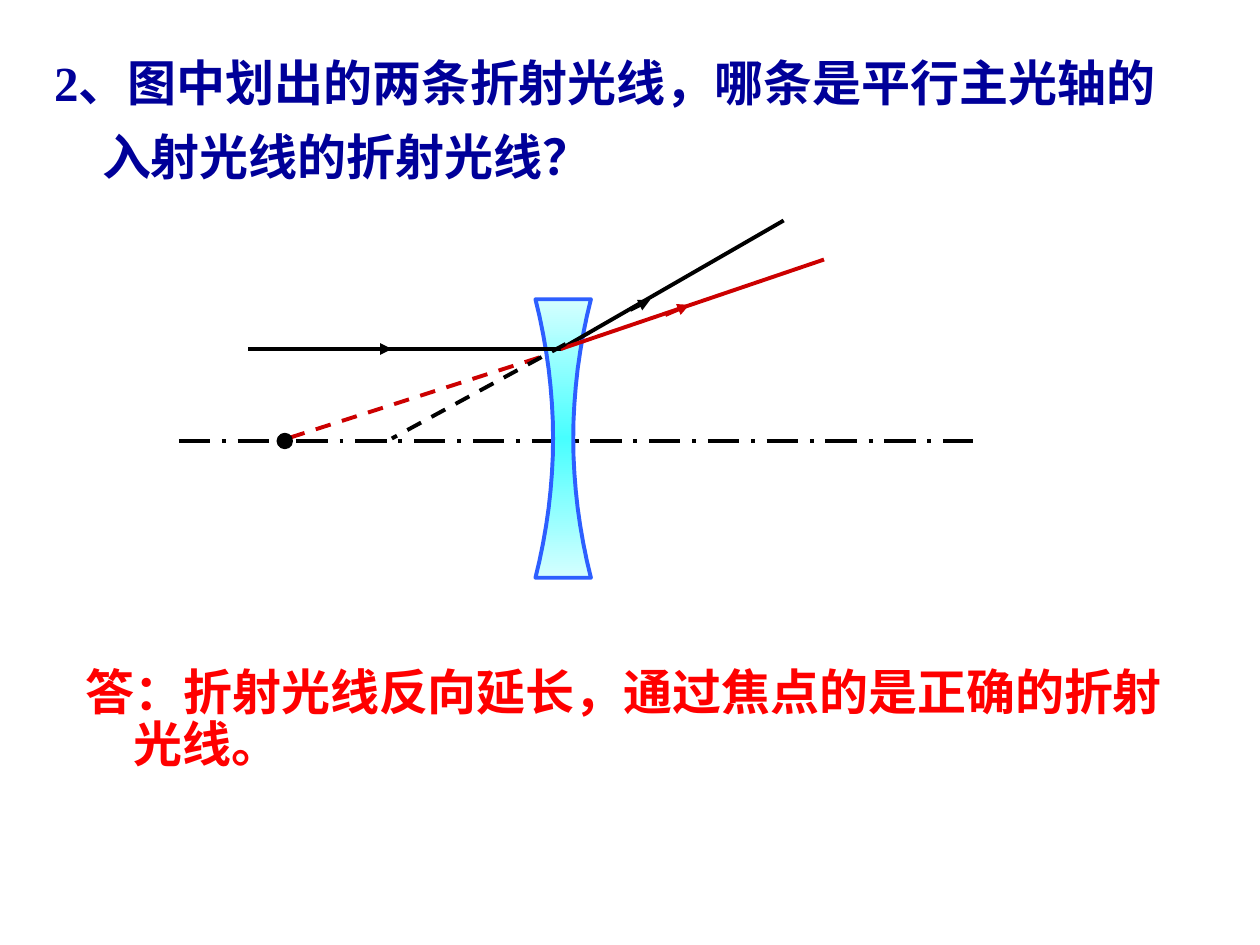
from dataclasses import dataclass
from typing import Optional

from lxml.etree import SubElement
from pptx import Presentation
from pptx.dml.color import RGBColor
from pptx.enum.dml import MSO_LINE
from pptx.enum.shapes import MSO_CONNECTOR, MSO_SHAPE
from pptx.enum.text import MSO_ANCHOR, MSO_AUTO_SIZE, PP_ALIGN
from pptx.oxml.ns import qn
from pptx.util import Emu, Inches, Pt

# Grid of 100 columns by 75 rows, each cell a tenth of an inch
CELL = Inches(0.1)
COLORS = {"question": "000099", "answer": "FF0000", "black": "000000",
          "red": "CC0000", "lens_edge": "2D5FFF",
          "lens_pale": "D5FFFF", "lens_deep": "47FFFF"}
AXIS_ROW = 35
ENTRY = (44.5, 27.7)


@dataclass
class Ray:
    start: tuple[float, float]
    end: tuple[float, float]
    color: str = "black"
    dash: Optional[MSO_LINE] = None
    arrow: bool = False


RED_EXTENSION = Ray((44.9, 27.7), (22.8, 34.8), "red", MSO_LINE.DASH)
OPTICAL_AXIS = Ray((14.2, AXIS_ROW), (77.2, AXIS_ROW),
                   dash=MSO_LINE.LONG_DASH_DOT)
LIGHT_RAYS = [
    # Incident ray
    Ray((19.7, 27.7), ENTRY),
    Ray((28.8, 27.7), (31.1, 27.7), arrow=True),
    # Two candidate refracted rays
    Ray(ENTRY, (62.2, 17.5)),
    Ray((50, 24.6), (51.6, 23.8), arrow=True),
    Ray(ENTRY, (65.4, 20.6), "red"),
    Ray((52.8, 25), (54.7, 24.2), "red", arrow=True),
    # Backward extension of the black ray
    Ray((44.9, 27.3), (31.1, 34.8), dash=MSO_LINE.DASH),
]


def grid(cells: float) -> Emu:
    return Emu(round(cells * CELL))


def rgb(name: str) -> RGBColor:
    return RGBColor.from_string(COLORS[name])


def draw_ray(shapes, ray: Ray) -> None:
    line = shapes.add_connector(
        MSO_CONNECTOR.STRAIGHT, *map(grid, ray.start + ray.end))
    line.line.color.rgb = rgb(ray.color)
    line.line.width = Pt(2.25)
    if ray.dash is not None:
        line.line.dash_style = ray.dash
    properties = line._element.spPr
    if ray.arrow:
        SubElement(properties.find(qn("a:ln")), qn("a:tailEnd"), type="triangle")
    SubElement(properties, qn("a:effectLst"))


def draw_lens(shapes, center: tuple[float, float], half_height: float,
              waist: float, flare: float, steps: int = 16) -> None:
    """Concave lens with two parabolic sides."""
    heights = [2 * i / steps - 1 for i in range(steps + 1)]
    right = [(center[0] + waist + flare * t * t, center[1] + half_height * t)
             for t in heights]
    left = [(2 * center[0] - x, y) for x, y in reversed(right)]
    outline = [(x * 100, y * 100) for x, y in right + left]
    builder = shapes.build_freeform(*outline[0], scale=CELL / 100)
    builder.add_line_segments(outline[1:], close=True)
    lens = builder.convert_to_shape()
    lens.shadow.inherit = False
    lens.line.color.rgb = rgb("lens_edge")
    lens.line.width = Pt(2.25)
    lens.fill.gradient()
    lens.fill.gradient_angle = 90
    stops = lens.fill._fill._gradFill.find(qn("a:gsLst"))
    for stop in list(stops):
        stops.remove(stop)
    for position, name in ((0, "lens_pale"), (50, "lens_deep"), (100, "lens_pale")):
        stop = SubElement(stops, qn("a:gs"), pos=str(position * 1000))
        SubElement(stop, qn("a:srgbClr"), val=COLORS[name])


def draw_focus(shapes, center: tuple[float, float], size: float) -> None:
    focus = shapes.add_shape(
        MSO_SHAPE.OVAL, *(grid(c - size / 2) for c in center),
        grid(size), grid(size))
    focus.shadow.inherit = False
    focus.fill.solid()
    focus.fill.fore_color.rgb = rgb("black")
    focus.line.color.rgb = rgb("black")
    focus.line.width = Pt(0.75)


def write_text(box, area: tuple[float, ...], text: str, color: str,
               spacing: float) -> None:
    box.left, box.top, box.width, box.height = map(grid, area)
    frame = box.text_frame
    frame.text = text
    paragraph = frame.paragraphs[0]
    font = paragraph.runs[0].font
    formats = [
        (frame, {"word_wrap": True, "auto_size": MSO_AUTO_SIZE.NONE,
                 "vertical_anchor": MSO_ANCHOR.TOP}),
        (paragraph, {"alignment": PP_ALIGN.LEFT, "line_spacing": spacing}),
        (font, {"name": "Times New Roman", "size": Pt(28), "bold": True}),
    ]
    for target, values in formats:
        for attribute, value in values.items():
            setattr(target, attribute, value)
    font.color.rgb = rgb(color)
    # Hanging indent
    indent = Inches(0.38)
    properties = paragraph._p.get_or_add_pPr()
    properties.set("marL", str(indent))
    properties.set("indent", str(-indent))


def main() -> None:
    presentation = Presentation()
    presentation.slide_width = 100 * CELL
    presentation.slide_height = 75 * CELL
    slide = presentation.slides.add_slide(presentation.slide_layouts[5])
    shapes = slide.shapes

    # Question
    write_text(shapes.title, (3.3, 2.5, 92.5, 16.7),
               "2、图中划出的两条折射光线，哪条是平行主光轴的入射光线的折射光线？",
               "question", 1.25)

    # Ray diagram
    draw_ray(shapes, RED_EXTENSION)
    draw_ray(shapes, OPTICAL_AXIS)
    draw_lens(shapes, center=(44.7, 34.8), half_height=11.05, waist=0.8, flare=1.4)
    draw_focus(shapes, (22.6, AXIS_ROW), 1.2)
    for ray in LIGHT_RAYS:
        draw_ray(shapes, ray)

    # Answer
    answer = shapes.add_textbox(0, 0, CELL, CELL)
    write_text(answer, (5.8, 52.5, 89.2, 10.3),
               "答：折射光线反向延长，通过焦点的是正确的折射光线。", "answer", 0.9)

    presentation.save("out.pptx")


if __name__ == "__main__":
    main()
